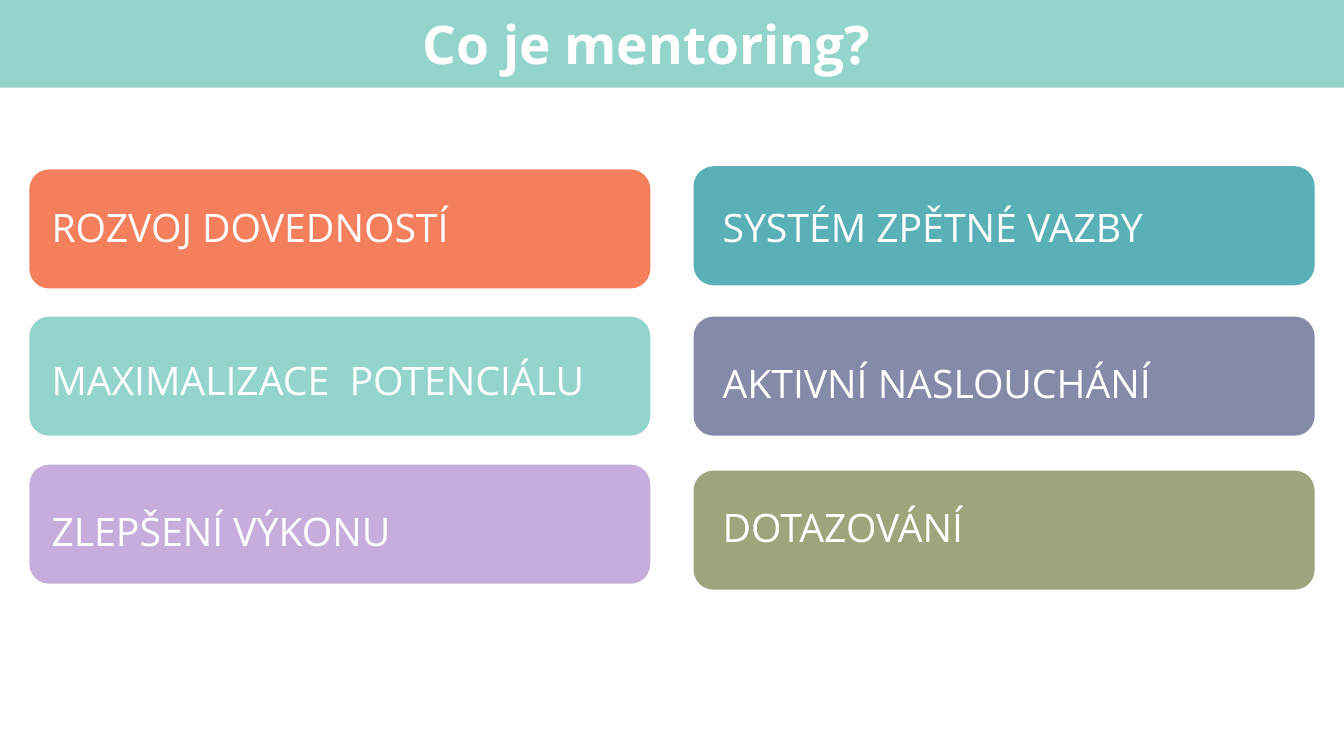
"""Build the slide on what mentoring is: a title band and six labelled cards."""
from pptx import Presentation
from pptx import util as u
from pptx.dml.color import RGBColor
from pptx.enum import shapes, text

WHITE = RGBColor(0xFF, 0xFF, 0xFF)
MINT = RGBColor(0x93, 0xD4, 0xCC)
ORANGE = RGBColor(0xF4, 0x7F, 0x5D)
LILAC = RGBColor(0xC7, 0xAD, 0xDB)
TEAL = RGBColor(0x59, 0xB0, 0xB7)
SLATE = RGBColor(0x85, 0x8A, 0xA8)
OLIVE = RGBColor(0x9D, 0xA5, 0x7C)

prs = Presentation()
prs.slide_width, prs.slide_height = u.Cm(33.87), u.Cm(19.05)
s = prs.slides.add_slide(prs.slide_layouts[6])


def add_block(kind, x, y, w, h, color):
    sp = s.shapes.add_shape(kind, u.Cm(x), u.Cm(y), u.Cm(w), u.Cm(h))
    sp.shadow.inherit = False
    sp.fill.solid()
    sp.fill.fore_color.rgb = color
    sp.line.fill.background()
    return sp


def add_text(words, x, y, w, h, size, margin_x, margin_y):
    tf = s.shapes.add_textbox(u.Cm(x), u.Cm(y), u.Cm(w), u.Cm(h)).text_frame
    tf.word_wrap = True
    tf.auto_size = text.MSO_AUTO_SIZE.SHAPE_TO_FIT_TEXT
    tf.margin_left = tf.margin_right = u.Cm(margin_x)
    tf.margin_top = tf.margin_bottom = u.Cm(margin_y)
    p = tf.paragraphs[0]
    p.text = words
    font = p.runs[0].font
    font.name, font.size, font.color.rgb = "Open Sans", u.Pt(size), WHITE
    return p


add_block(shapes.MSO_SHAPE.RECTANGLE, 0, 0, 33.87, 2.21, MINT)
title = add_text("Co je mentoring?", 9.45, 0.15, 13.69, 1.88, 38, 0.25, 0.13)
title.alignment = text.PP_ALIGN.CENTER
title.runs[0].font.bold = True

columns = [
    (0.74, 1.17, [
        ("ROZVOJ DOVEDNOSTÍ", ORANGE, 4.27, 5.46),
        ("MAXIMALIZACE  POTENCIÁLU", MINT, 7.98, 9.32),
        ("ZLEPŠENÍ VÝKONU", LILAC, 11.71, 13.13),
    ]),
    (17.48, 18.08, [
        ("SYSTÉM ZPĚTNÉ VAZBY", TEAL, 4.19, 5.46),
        ("AKTIVNÍ NASLOUCHÁNÍ", SLATE, 7.98, 9.4),
        ("DOTAZOVÁNÍ", OLIVE, 11.86, 13.03),
    ]),
]
for card_x, label_x, cards in columns:
    for words, color, card_y, label_y in cards:
        card = add_block(shapes.MSO_SHAPE.ROUNDED_RECTANGLE, card_x, card_y, 15.65, 3, color)
        card.adjustments[0] = 0.167
        label = add_text(words, label_x, label_y, 14.83, 0.89, 28, 0.13, 0.06)
        label.line_spacing = 0.62

prs.save("out.pptx")
